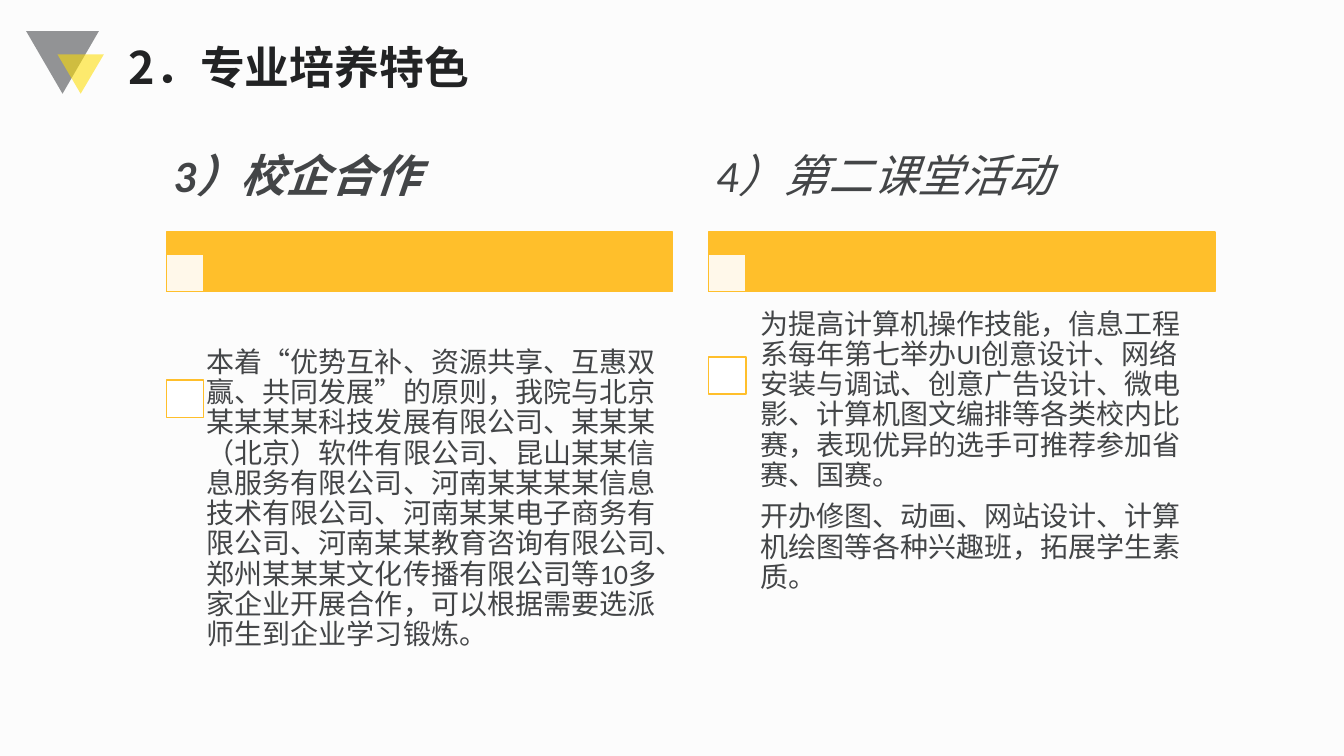
from lxml.etree import SubElement
from pptx import Presentation
from pptx.dml.color import RGBColor
from pptx.enum.shapes import MSO_SHAPE as SHAPE
from pptx.enum.text import MSO_ANCHOR as ANCHOR
from pptx.oxml.ns import qn
from pptx.util import Inches, Pt

COLORS = {"white": "FFFFFF", "page": "FBFBFB", "gray": "434547",
          "yellow": "FFDE01", "gold": "FFBF2B", "title": "222324"}
CJK_FONT = "Noto Sans CJK SC"
LEFT_X, TOP_Y, COLUMN_W, COLUMN_STEP = 1.65, 1.24, 5.02, 5.38

# Each column: heading, whether it is bold, checkbox top, body box, paragraphs.
# Checkbox and body positions are relative to the column's corner.
COLUMNS = [
    ("3）校企合作", True, 2.53, (0.24, 1.87, 4.89, 3.69), [
        "本着“优势互补、资源共享、互惠双赢、共同发展”的原则，我院与北京某某某某科技发展有限公司、"
        "某某某（北京）软件有限公司、昆山某某信息服务有限公司、河南某某某某信息技术有限公司、"
        "河南某某电子商务有限公司、河南某某教育咨询有限公司、郑州某某某文化传播有限公司等10多家企业"
        "开展合作，可以根据需要选派师生到企业学习锻炼。"]),
    ("4）第二课堂活动", False, 2.3, (0.35, 1.9, 4.67, 2.68), [
        "为提高计算机操作技能，信息工程系每年第七举办UI创意设计、网络安装与调试、创意广告设计、"
        "微电影、计算机图文编排等各类校内比赛，表现优异的选手可推荐参加省赛、国赛。",
        "开办修图、动画、网站设计、计算机绘图等各种兴趣班，拓展学生素质。"]),
]


def rgb(name):
    return RGBColor.from_string(COLORS[name])


def add_block(s, x, y, w, h, fill, kind=SHAPE.RECTANGLE, opacity=100, line=None):
    sp = s.shapes.add_shape(kind, Inches(x), Inches(y), Inches(w), Inches(h))
    sp.shadow.inherit = False
    sp.fill.solid()
    sp.fill.fore_color.rgb = rgb(fill)
    if opacity < 100:
        color = sp.fill._xPr.find(qn("a:solidFill"))[0]
        SubElement(color, qn("a:alpha"), val=str(opacity * 1000))
    if line:
        sp.line.color.rgb = rgb(line)
        sp.line.width = Pt(1)
    else:
        sp.line.fill.background()
    return sp


def add_text(s, x, y, w, h, paragraphs, size=20, color="gray", font="Calibri",
             bold=False, italic=False, inset=(0.1, 0.05), after=0):
    box = s.shapes.add_textbox(Inches(x), Inches(y), Inches(w), Inches(h))
    tf = box.text_frame
    tf.word_wrap = True
    tf.vertical_anchor = ANCHOR.MIDDLE
    tf.margin_left = tf.margin_right = Inches(inset[0])
    tf.margin_top = tf.margin_bottom = Inches(inset[1])
    for i, text in enumerate(paragraphs):
        p = tf.add_paragraph() if i else tf.paragraphs[0]
        p.line_spacing = 0.9
        p.space_after = Pt(after)
        r = p.add_run()
        r.text = text
        r.font.name = font
        r.font.size = Pt(size)
        r.font.bold = bold
        r.font.italic = italic
        r.font.color.rgb = rgb(color)
        SubElement(r.font._element, qn("a:ea"), typeface=CJK_FONT)


def add_header(s, x, y, title):
    # Two overlapping triangles pointing down, then the title
    for dx, dy, w, h, fill in ((0, 0, 0.72, 0.62, "gray"),
                               (0.31, 0.23, 0.46, 0.39, "yellow")):
        triangle = add_block(s, x + dx, y + dy, w, h, fill,
                             SHAPE.ISOSCELES_TRIANGLE, opacity=57)
        triangle.rotation = 180
    add_text(s, x + 0.92, y - 0.05, 11.35, 0.87, [title], size=32,
             color="title", font=CJK_FONT, bold=True)


def add_column(s, x, y, w, heading, bold, check_dy, body, paragraphs):
    # Gold bar with a pale square in its corner
    add_block(s, x, y + 1.06, w, 0.59, "gold", line="gold")
    add_block(s, x, y + 1.28, 0.37, 0.37, "white", opacity=90, line="gold")
    add_text(s, x, y, w, 1.06, [heading], size=32, bold=bold, italic=True,
             inset=(0.07, 0.04), after=11)
    # Checkbox and body text
    add_block(s, x, y + check_dy, 0.37, 0.37, "white", line="gold")
    dx, dy, body_w, body_h = body
    add_text(s, x + dx, y + dy, body_w, body_h, paragraphs,
             inset=(0.16, 0.16), after=8)


def main():
    prs = Presentation()
    prs.slide_width, prs.slide_height = Inches(13.33), Inches(7.5)
    s = prs.slides.add_slide(prs.slide_layouts[6])
    add_block(s, 0, 0, 13.33, 7.5, "page", opacity=60)
    add_header(s, 0.26, 0.31, "2．专业培养特色")
    for i, column in enumerate(COLUMNS):
        add_column(s, LEFT_X + i * COLUMN_STEP, TOP_Y, COLUMN_W, *column)
    prs.save("out.pptx")


if __name__ == "__main__":
    main()
